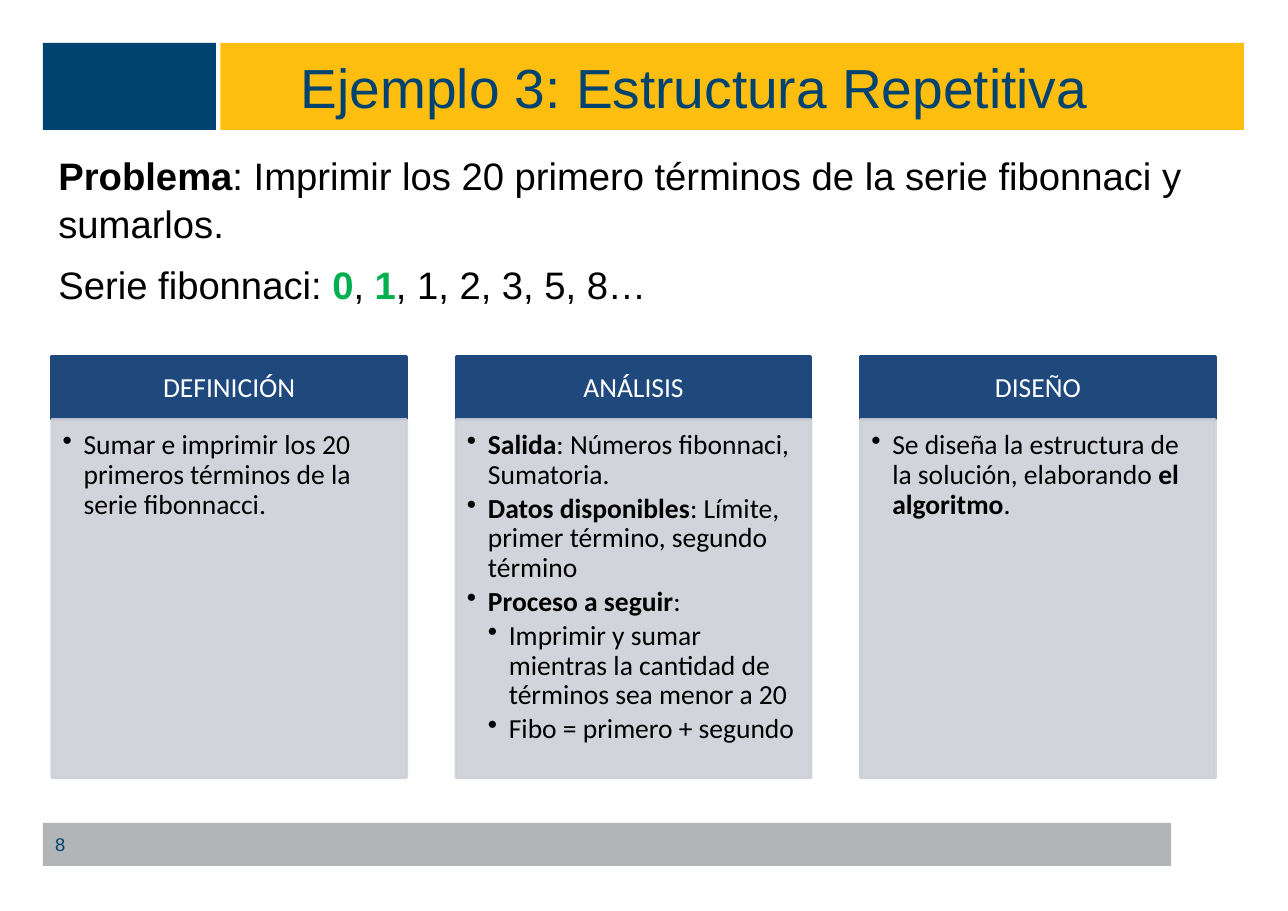
from dataclasses import dataclass
from typing import Any, NamedTuple

from lxml import etree
from pptx import Presentation
from pptx.dml.color import RGBColor
from pptx.enum.shapes import MSO_SHAPE
from pptx.enum.text import MSO_ANCHOR, MSO_AUTO_SIZE, PP_ALIGN
from pptx.oxml.ns import qn
from pptx.util import Inches, Pt

RECTANGLE = MSO_SHAPE.RECTANGLE
TOP, MIDDLE = MSO_ANCHOR.TOP, MSO_ANCHOR.MIDDLE
LEFT, CENTER = PP_ALIGN.LEFT, PP_ALIGN.CENTER
NO_FIT = MSO_AUTO_SIZE.NONE

NAVY, GOLD, GREY = "004270", "FEBE10", "B2B5B6"
HEADER_BLUE, PANEL_GREY = "1F497D", "CDD0D7"
BLACK, WHITE, GREEN = "000000", "FFFFFF", "00B050"


class Box(NamedTuple):
    left: float
    top: float
    width: float
    height: float


class Span(NamedTuple):
    text: str
    bold: bool = False
    color: str | None = None


class Line(NamedTuple):
    spans: list[Span]
    level: int = 0


class Bar(NamedTuple):
    box: Box
    color: str


@dataclass
class TextStyle:
    font: str
    size: float
    color: str
    margins: tuple[float, float, float, float] = (0.11, 0.05, 0.11, 0.05)
    anchor: Any = TOP
    align: Any = LEFT
    line_spacing: float = 1.0
    space_before: float = 0
    space_after: float = 0
    bullet: str | None = None


@dataclass
class Stage:
    heading: str
    points: list[Line]


TITLE_STYLE = TextStyle("Arial", 36, NAVY, anchor=MIDDLE)
NUMBER_STYLE = TextStyle("Arial", 12, NAVY, anchor=MIDDLE)
PROBLEM_STYLE = TextStyle("Arial", 25, BLACK, margins=(0.11, 0.07, 0.11, 0.05),
                          line_spacing=1.04, space_before=8.5)
HEADING_STYLE = TextStyle("Calibri", 18, WHITE, margins=(0.14, 0.08, 0.14, 0.08),
                          anchor=MIDDLE, align=CENTER, line_spacing=0.9)
POINT_STYLE = TextStyle("Calibri", 18, BLACK, margins=(0.1, 0.1, 0.13, 0.16),
                        line_spacing=0.9, space_after=2.7, bullet="•")

BARS = [
    Bar(Box(0.39, 7.47, 10.24, 0.39), GREY),
    Bar(Box(0.39, 0.39, 1.57, 0.79), NAVY),
    Bar(Box(2, 0.39, 9.29, 0.79), GOLD),
]
PROBLEM = [
    Line([Span("Problema", True),
          Span(": Imprimir los 20 primero términos de la serie fibonnaci y sumarlos.")]),
    Line([Span("Serie fibonnaci: "), Span("0", True, GREEN), Span(", "),
          Span("1", True, GREEN), Span(", 1, 2, 3, 5, 8…")]),
]
STAGES = [
    Stage("DEFINICIÓN", [
        Line([Span("Sumar e imprimir los 20 primeros términos de la serie fibonnacci.")], 1),
    ]),
    Stage("ANÁLISIS", [
        Line([Span("Salida", True), Span(": Números fibonnaci, Sumatoria.")], 1),
        Line([Span("Datos disponibles", True),
              Span(": Límite, primer término, segundo término")], 1),
        Line([Span("Proceso a seguir", True), Span(":")], 1),
        Line([Span("Imprimir y sumar mientras la cantidad de términos sea menor a 20")], 2),
        Line([Span("Fibo = primero + segundo")], 2),
    ]),
    Stage("DISEÑO", [
        Line([Span("Se diseña la estructura de la solución, elaborando "),
              Span("el algoritmo", True), Span(".")], 1),
    ]),
]
STAGE_LEFT, STAGE_STEP, STAGE_WIDTH = 0.47, 3.67, 3.22
HEADING_TOP, HEADING_HEIGHT, PANEL_HEIGHT = 3.24, 0.57, 3.25
BULLET_INDENT = 0.19


def apply(target: Any, values: dict[str, Any]) -> None:
    for name, value in values.items():
        setattr(target, name, value)


def rgb(color: str) -> RGBColor:
    return RGBColor.from_string(color)


def place(shape: Any, box: Box) -> None:
    apply(shape, {name: Inches(value) for name, value in box._asdict().items()})


def set_bullet(paragraph: Any, style: TextStyle, level: int) -> None:
    properties = paragraph._p.get_or_add_pPr()
    indent = Inches(BULLET_INDENT) if style.bullet else 0
    properties.set("marL", str(indent * level))
    properties.set("indent", str(-indent))
    if style.bullet:
        etree.SubElement(properties, qn("a:buChar")).set("char", style.bullet)
    else:
        etree.SubElement(properties, qn("a:buNone"))


def write(shape: Any, lines: list[Line], style: TextStyle) -> None:
    frame = shape.text_frame
    sides = ("margin_left", "margin_top", "margin_right", "margin_bottom")
    apply(frame, dict(zip(sides, map(Inches, style.margins))))
    apply(frame, {"word_wrap": True, "auto_size": NO_FIT, "vertical_anchor": style.anchor})
    for index, line in enumerate(lines):
        paragraph = frame.add_paragraph() if index else frame.paragraphs[0]
        set_bullet(paragraph, style, line.level)
        apply(paragraph, {
            "level": line.level,
            "alignment": style.align,
            "line_spacing": style.line_spacing,
            "space_before": Pt(style.space_before if index else 0),
            "space_after": Pt(style.space_after),
        })
        for span in line.spans:
            run = paragraph.add_run()
            run.text = span.text
            apply(run.font, {"name": style.font, "size": Pt(style.size), "bold": span.bold})
            run.font.color.rgb = rgb(span.color or style.color)


def add_rectangle(slide: Any, box: Box, color: str, outlined: bool = False,
                  opacity: int = 100) -> Any:
    rectangle = slide.shapes.add_shape(RECTANGLE, *map(Inches, box))
    rectangle.shadow.inherit = False
    fills = [rectangle.fill]
    if outlined:
        rectangle.line.width = Pt(2)
        fills.append(rectangle.line.fill)
    else:
        rectangle.line.fill.background()
    for fill in fills:
        fill.solid()
        fill.fore_color.rgb = rgb(color)
    if opacity < 100:
        for tint in rectangle._element.spPr.iter(qn("a:srgbClr")):
            etree.SubElement(tint, qn("a:alpha")).set("val", str(opacity * 1000))
    return rectangle


def fill_placeholder(slide: Any, index: int, box: Box, lines: list[Line],
                     style: TextStyle) -> None:
    placeholder = slide.placeholders[index]
    slide.shapes._spTree.append(placeholder._element)
    place(placeholder, box)
    write(placeholder, lines, style)


def add_stage(slide: Any, left: float, stage: Stage) -> None:
    heading_box = Box(left, HEADING_TOP, STAGE_WIDTH, HEADING_HEIGHT)
    panel_box = Box(left, HEADING_TOP + HEADING_HEIGHT, STAGE_WIDTH, PANEL_HEIGHT)
    heading = add_rectangle(slide, heading_box, HEADER_BLUE, outlined=True)
    write(heading, [Line([Span(stage.heading)])], HEADING_STYLE)
    panel = add_rectangle(slide, panel_box, PANEL_GREY, outlined=True, opacity=90)
    write(panel, stage.points, POINT_STYLE)


def main() -> None:
    deck = Presentation()
    apply(deck, {"slide_width": Inches(11.69), "slide_height": Inches(8.27)})
    slide = deck.slides.add_slide(deck.slide_layouts[1])
    for bar in BARS:
        add_rectangle(slide, bar.box, bar.color)
    fill_placeholder(slide, 0, Box(2.62, 0.39, 8.68, 0.79),
                     [Line([Span("Ejemplo 3: Estructura Repetitiva")])], TITLE_STYLE)
    page_number = slide.shapes.add_textbox(*map(Inches, Box(0.39, 7.47, 2.73, 0.39)))
    write(page_number, [Line([Span("8")])], NUMBER_STYLE)
    fill_placeholder(slide, 1, Box(0.42, 1.3, 10.9, 5.56), PROBLEM, PROBLEM_STYLE)
    for column, stage in enumerate(STAGES):
        add_stage(slide, STAGE_LEFT + column * STAGE_STEP, stage)
    deck.save("out.pptx")


if __name__ == "__main__":
    main()
